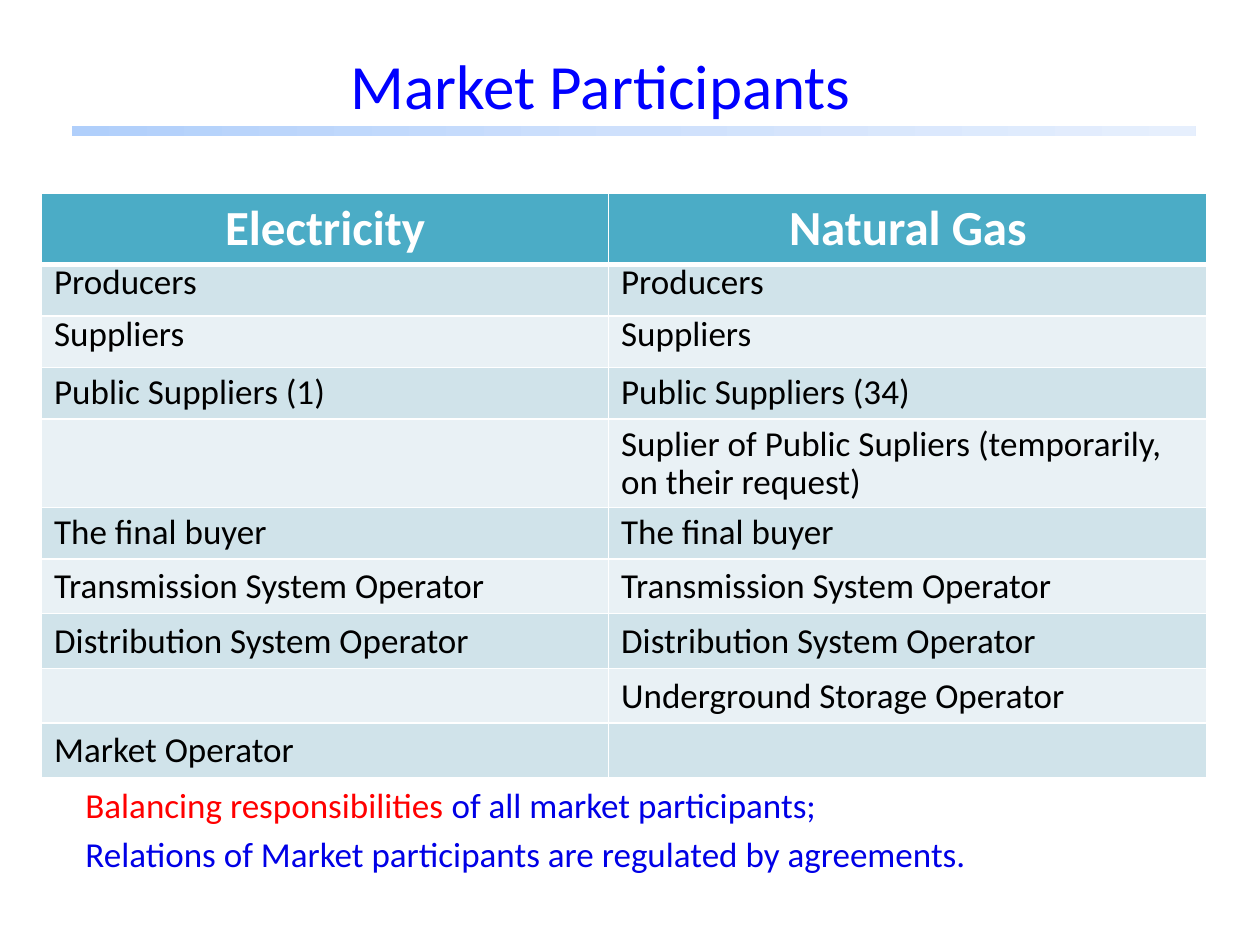
from copy import deepcopy
from dataclasses import dataclass

from lxml.etree import SubElement
from pptx import Presentation
from pptx.dml.color import RGBColor as Rgb
from pptx.enum.shapes import MSO_SHAPE as Shape
from pptx.enum.text import MSO_ANCHOR as Anchor, PP_ALIGN as Align
from pptx.oxml.ns import qn
from pptx.util import Inches, Pt


@dataclass(frozen=True)
class Theme:
    font: str = "Calibri"
    title: int = 36
    head: int = 28
    body: int = 20
    blue: str = "0000FF"
    navy: str = "0000E6"
    red: str = "FF0000"
    black: str = "000000"
    white: str = "FFFFFF"
    teal: str = "4BACC6"
    bands: tuple = ("D0E3EA", "E9F1F5")
    fade: tuple = ("B0CFFB", "CEE0FC", "E6EFFD")


@dataclass(frozen=True)
class Row:
    left: str
    right: str
    lead: float = 1.0


@dataclass(frozen=True)
class Run:
    text: str
    size: int
    color: str
    bold: bool = False


THEME = Theme()

ROWS = [
    Row("Electricity", "Natural Gas"),
    Row("Producers", "Producers", 0.7),
    Row("Suppliers", "Suppliers", 0.7),
    Row("Public Suppliers (1)", "Public Suppliers (34)", 0.9),
    Row("", "Suplier of Public Supliers (temporarily, on their request)", 0.9),
    Row("The final buyer", "The final buyer", 0.9),
    Row("Transmission System Operator", "Transmission System Operator"),
    Row("Distribution System Operator", "Distribution System Operator"),
    Row("", "Underground Storage Operator"),
    Row("Market Operator", ""),
]

NOTES = [
    [Run("Balancing responsibilities ", THEME.body, THEME.red),
     Run("of all market participants;", THEME.body, THEME.navy)],
    [Run("Relations of Market participants are regulated by agreements.",
         THEME.body, THEME.navy)],
]


def apply(item, form: dict) -> None:
    for name, value in form.items():
        setattr(item, name, value)


def write(para, runs: list[Run], form: dict) -> None:
    apply(para, form)
    for run in runs:
        part = para.add_run()
        part.text = run.text
        apply(part.font, {"name": THEME.font, "size": Pt(run.size),
                          "bold": run.bold})
        part.font.color.rgb = Rgb.from_string(run.color)


def add_text(slide, box: tuple, paras: list[list[Run]], form: dict,
             anchor: Anchor) -> None:
    frame = slide.shapes.add_textbox(*map(Inches, box)).text_frame
    apply(frame, {"word_wrap": True, "vertical_anchor": anchor})
    for i, runs in enumerate(paras):
        para = frame.add_paragraph() if i else frame.paragraphs[0]
        write(para, runs, form)


def add_bar(slide, box: tuple) -> None:
    bar = slide.shapes.add_shape(Shape.RECTANGLE, *map(Inches, box))
    bar.shadow.inherit = False
    bar.line.fill.background()
    bar.fill.gradient()
    bar.fill.gradient_angle = 0
    # The default gradient has two stops; add one in the middle
    stops = bar._element.spPr.find(".//" + qn("a:gsLst"))
    stops.insert(1, deepcopy(stops[0]))
    for i, (stop, color) in enumerate(zip(bar.fill.gradient_stops, THEME.fade)):
        stop.color.rgb = Rgb.from_string(color)
        stop.position = i / 2


def add_edges(cell, widths: dict[str, int]) -> None:
    props = cell._tc.get_or_add_tcPr()
    for side, width in widths.items():
        line = SubElement(props, qn(f"a:ln{side}"), w=str(Pt(width)))
        fill = SubElement(line, qn("a:solidFill"))
        SubElement(fill, qn("a:srgbClr"), val=THEME.white)


def add_grid(slide, box: tuple, cols: tuple) -> None:
    table = slide.shapes.add_table(len(ROWS), len(cols),
                                   *map(Inches, box)).table
    for col, width in zip(table.columns, cols):
        col.width = Inches(width)
    for i, row in enumerate(ROWS):
        table.rows[i].height = Inches(0.41)
        head = i == 0
        color = THEME.teal if head else THEME.bands[(i - 1) % 2]
        for j, text in enumerate((row.left, row.right)):
            cell = table.cell(i, j)
            add_edges(cell, {"L": 1, "R": 1, "T": 3 if i == 1 else 1,
                             "B": 3 if head else 1})
            cell.fill.solid()
            cell.fill.fore_color.rgb = Rgb.from_string(color)
            if text:
                run = (Run(text, THEME.head, THEME.white, True) if head
                       else Run(text, THEME.body, THEME.black))
                write(cell.text_frame.paragraphs[0], [run],
                      {"alignment": Align.CENTER if head else Align.LEFT,
                       "line_spacing": row.lead})


def main() -> None:
    deck = Presentation()
    apply(deck, {"slide_width": Inches(10), "slide_height": Inches(7.5)})
    slide = deck.slides.add_slide(deck.slide_layouts[6])

    # Title and rule
    add_text(slide, (0.52, 0.17, 8.5, 1),
             [[Run("Market Participants", THEME.title, THEME.blue)]],
             {"alignment": Align.CENTER}, Anchor.MIDDLE)
    add_bar(slide, (0.57, 1, 8.92, 0.08))

    # Participants by market
    add_grid(slide, (0.33, 1.53, 9.25, 4.1), (4.5, 4.75))

    # Closing remarks
    add_text(slide, (0.58, 6.17, 9.17, 1.08), NOTES,
             {"space_before": Pt(4)}, Anchor.TOP)

    deck.save("out.pptx")


if __name__ == "__main__":
    main()
